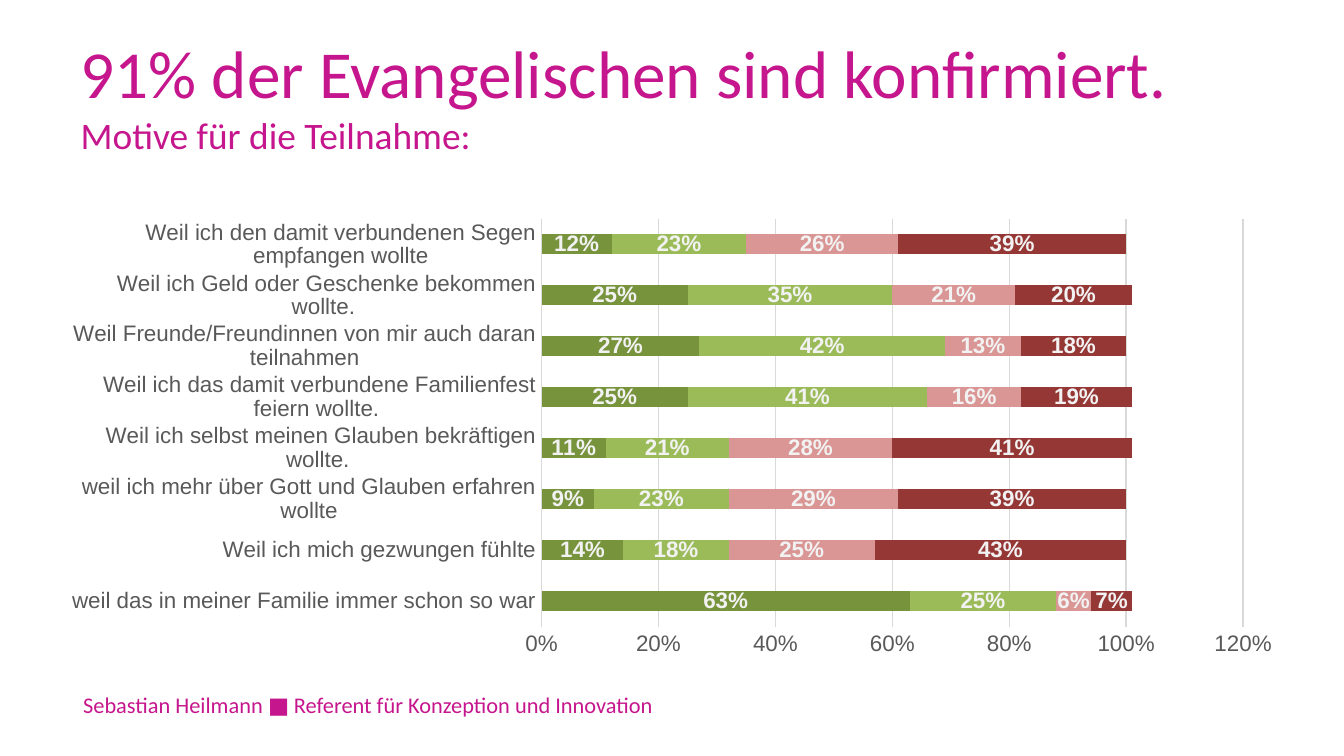
"""Build a slide with a stacked bar chart on the motives for confirmation."""
from dataclasses import dataclass

from lxml import etree
from pptx import Presentation
from pptx.chart.data import CategoryChartData
from pptx.dml.color import RGBColor
from pptx.enum.chart import XL_CHART_TYPE, XL_LABEL_POSITION, XL_TICK_MARK
from pptx.enum.text import MSO_ANCHOR, MSO_AUTO_SIZE, PP_ALIGN
from pptx.oxml.ns import qn
from pptx.util import Inches, Pt

STACKED = XL_CHART_TYPE.BAR_STACKED
CENTER = XL_LABEL_POSITION.CENTER
NO_TICK = XL_TICK_MARK.NONE
MIDDLE = MSO_ANCHOR.MIDDLE
NO_FIT = MSO_AUTO_SIZE.NONE
LEFT = PP_ALIGN.LEFT
TITLE_ONLY = 5


@dataclass(frozen=True)
class Theme:
    """Colours, fonts and type sizes of the slide."""
    accent: str = "C6168D"
    axis_text: str = "595959"
    grid: str = "D9D9D9"
    label: str = "F2F2F2"
    answers: tuple = ("77933C", "9BBB59", "D99694", "953735")
    text_font: str = "Calibri"
    chart_font: str = "Arial"
    headline: int = 36
    subtitle: int = 20
    small: int = 12
    hairline: float = 0.75


THEME = Theme()
WIDTH = Inches(10)
HEIGHT = WIDTH * 9 // 16
TITLE_BOX = (0.5, 0.23, 9, 0.94)
CHART_BOX = (0.52, 1.45, 9, 3.57)
FOOTER_BOX = (0.52, 5.08, 5.11, 0.33)
PLOT_SHARES = {"x": 0.39, "y": 0.05, "w": 0.58, "h": 0.85}

MOTIVES = (
    ("weil das in meiner Familie immer schon so war", (63, 25, 6, 7)),
    ("Weil ich mich gezwungen fühlte", (14, 18, 25, 43)),
    ("weil ich mehr über Gott und Glauben erfahren wollte", (9, 23, 29, 39)),
    ("Weil ich selbst meinen Glauben bekräftigen wollte. ", (11, 21, 28, 41)),
    ("Weil ich das damit verbundene Familienfest feiern wollte. ", (25, 41, 16, 19)),
    ("Weil Freunde/Freundinnen von mir auch daran teilnahmen", (27, 42, 13, 18)),
    ("Weil ich Geld oder Geschenke bekommen wollte. ", (25, 35, 21, 20)),
    ("Weil ich den damit verbundenen Segen empfangen wollte", (12, 23, 26, 39)),
)


def set_font(font, name, size, color, bold=False):
    """Apply typeface, size, colour and weight to a font."""
    font.name, font.size, font.bold = name, Pt(size), bold
    font.color.rgb = RGBColor.from_string(color)


def set_line(line):
    """Draw a line as a light hairline."""
    line.color.rgb = RGBColor.from_string(THEME.grid)
    line.width = Pt(THEME.hairline)


def fill_title(title):
    """Place the title and write the headline with its subtitle."""
    title.left, title.top, title.width, title.height = map(Inches, TITLE_BOX)
    frame = title.text_frame
    frame.auto_size, frame.vertical_anchor = NO_FIT, MIDDLE
    paragraph = frame.paragraphs[0]
    paragraph.alignment = LEFT
    set_font(paragraph.font, THEME.text_font, THEME.headline, THEME.accent)
    paragraph.add_run().text = "91% der Evangelischen sind konfirmiert."
    paragraph.add_line_break()
    subtitle = paragraph.add_run()
    subtitle.text = "Motive für die Teilnahme:"
    subtitle.font.size = Pt(THEME.subtitle)


def add_footer(slide):
    """Add the speaker line at the bottom of the slide."""
    frame = slide.shapes.add_textbox(*map(Inches, FOOTER_BOX)).text_frame
    frame.word_wrap, frame.vertical_anchor = True, MIDDLE
    speaker = frame.paragraphs[0]
    speaker.text = "Sebastian Heilmann ■ Referent für Konzeption und Innovation"
    set_font(speaker.font, THEME.text_font, THEME.small, THEME.accent)


def place_plot(chart):
    """Fix the inner plot area by shares of the chart's size."""
    plot_area = chart.element.find(".//" + qn("c:plotArea"))
    for old_layout in plot_area.findall(qn("c:layout")):
        plot_area.remove(old_layout)
    layout = etree.Element(qn("c:layout"))
    manual = etree.SubElement(layout, qn("c:manualLayout"))
    settings = {"layoutTarget": "inner", "xMode": "edge", "yMode": "edge"}
    for tag, value in (settings | PLOT_SHARES).items():
        etree.SubElement(manual, qn(f"c:{tag}")).set("val", str(value))
    plot_area.insert(0, layout)


def format_axes(chart):
    """Style the motive axis and the percentage axis."""
    motives, percent = chart.category_axis, chart.value_axis
    for axis in (motives, percent):
        axis.major_tick_mark = axis.minor_tick_mark = NO_TICK
        set_font(axis.tick_labels.font, THEME.chart_font, THEME.small, THEME.axis_text)
    set_line(motives.format.line)
    percent.format.line.fill.background()
    percent.minimum_scale, percent.maximum_scale, percent.major_unit = 0, 1.2, 0.2
    percent.tick_labels.number_format = "0%"
    percent.tick_labels.number_format_is_linked = False
    set_line(percent.major_gridlines.format.line)


def format_answer(answer, color):
    """Colour one series and label its bars."""
    answer.format.fill.solid()
    answer.format.fill.fore_color.rgb = RGBColor.from_string(color)
    labels = answer.data_labels
    labels.show_value, labels.position = True, CENTER
    labels.number_format, labels.number_format_is_linked = "0%", False
    set_font(labels.font, THEME.chart_font, THEME.small, THEME.label, bold=True)


def add_motive_chart(slide):
    """Add the stacked bar chart of the motives."""
    names, shares = zip(*MOTIVES)
    data = CategoryChartData(number_format="0%")
    data.categories = names
    for number, values in enumerate(zip(*shares), 1):
        data.add_series(f"Series {number}", [value / 100 for value in values])
    chart = slide.shapes.add_chart(STACKED, *map(Inches, CHART_BOX), data).chart
    chart.has_title = chart.has_legend = False
    set_font(chart.font, THEME.chart_font, THEME.small, THEME.axis_text)
    plot = chart.plots[0]
    plot.gap_width, plot.overlap, plot.vary_by_categories = 150, 100, False
    for answer, color in zip(plot.series, THEME.answers):
        format_answer(answer, color)
    format_axes(chart)
    place_plot(chart)


def main():
    """Build and save the slide."""
    deck = Presentation()
    deck.slide_width, deck.slide_height = WIDTH, HEIGHT
    slide = deck.slides.add_slide(deck.slide_layouts[TITLE_ONLY])
    fill_title(slide.shapes.title)
    add_motive_chart(slide)
    add_footer(slide)
    deck.save("out.pptx")


if __name__ == "__main__":
    main()
